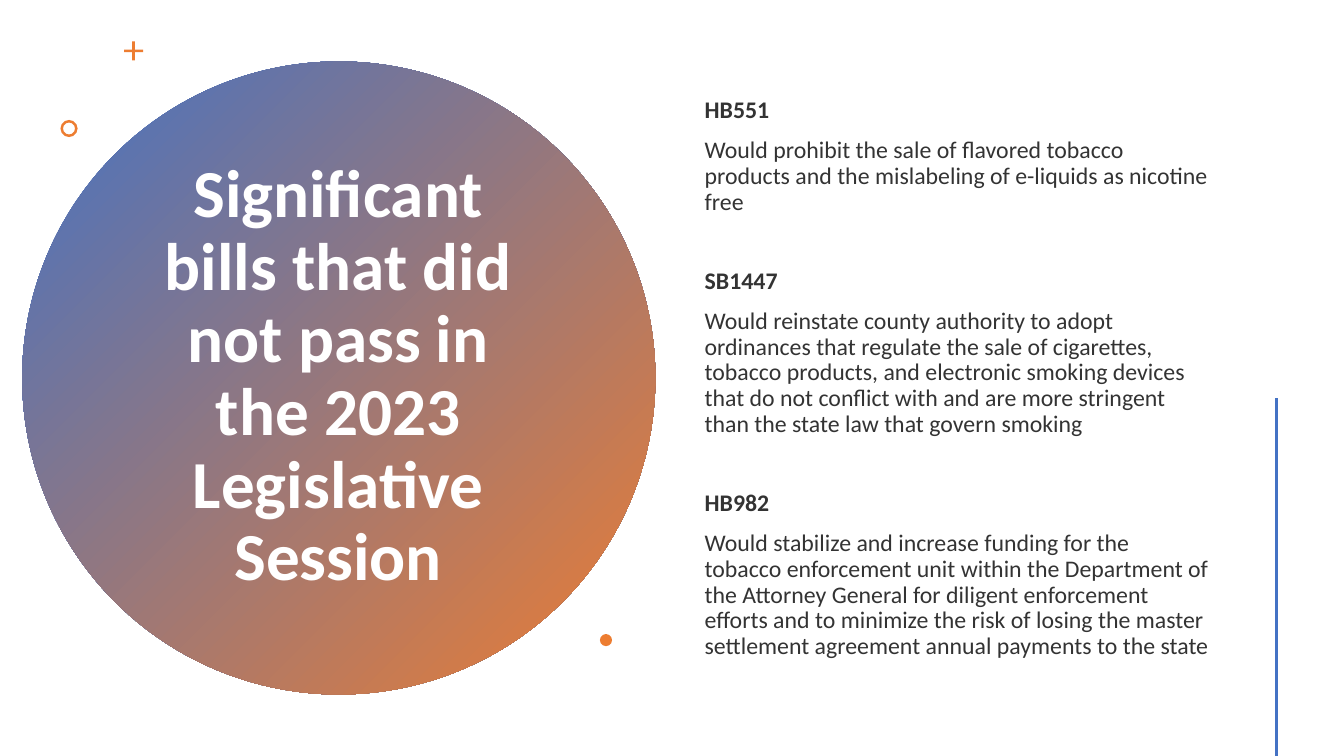
from lxml import etree
from pptx import Presentation
from pptx.dml.color import RGBColor
from pptx.enum.shapes import MSO_CONNECTOR, MSO_SHAPE
from pptx.enum.text import MSO_ANCHOR, MSO_AUTO_SIZE, PP_ALIGN
from pptx.oxml.ns import qn
from pptx.util import Inches, Pt

OVAL, DONUT, CROSS = MSO_SHAPE.OVAL, MSO_SHAPE.DONUT, MSO_SHAPE.CROSS
STRAIGHT = MSO_CONNECTOR.STRAIGHT
MIDDLE = MSO_ANCHOR.MIDDLE
CENTER, LEFT = PP_ALIGN.CENTER, PP_ALIGN.LEFT
FIXED_SIZE = MSO_AUTO_SIZE.NONE

SLIDE_WIDTH, SLIDE_HEIGHT = 13.33, 7.5
TITLE_ONLY_LAYOUT = 5
FONT = "Calibri"
BLUE, ORANGE, WHITE, DARK = "4472C4", "ED7D31", "FFFFFF", "333333"
LINE_SPACING = 0.9
TEXT_GAP, BILL_GAP = 10, 38.5

TITLE = "Significant bills that did not pass in the 2023 Legislative Session"
BILLS = [
    ("HB551", "Would prohibit the sale of flavored tobacco products and the "
     "mislabeling of e-liquids as nicotine free"),
    ("SB1447", "Would reinstate county authority to adopt ordinances that "
     "regulate the sale of cigarettes, tobacco products, and electronic "
     "smoking devices that do not conflict with and are more stringent than "
     "the state law that govern smoking"),
    ("HB982", "Would stabilize and increase funding for the tobacco "
     "enforcement unit within the Department of the Attorney General for "
     "diligent enforcement efforts and to minimize the risk of losing the "
     "master settlement agreement annual payments to the state"),
]
# Shape, left, top, size, adjustment
ACCENTS = [
    (CROSS, 1.23, 0.41, 0.19, 0.43),
    (DONUT, 0.6, 1.19, 0.17, 0.15),
    (OVAL, 5.95, 6.29, 0.12, None),
]


def color(hex_value):
    return RGBColor.from_string(hex_value)


def box(left, top, width, height):
    return [Inches(value) for value in (left, top, width, height)]


def add_plain_shape(slide, kind, left, top, size):
    """Add a square-framed shape without outline or shadow."""
    shape = slide.shapes.add_shape(kind, *box(left, top, size, size))
    shape.shadow.inherit = False
    shape.line.fill.background()
    return shape


def add_gradient_circle(slide):
    circle = add_plain_shape(slide, OVAL, 0.22, 0.61, 6.28)
    circle.fill.gradient()
    circle.fill.gradient_angle = 315
    for stop, hex_value in zip(circle.fill.gradient_stops, (BLUE, ORANGE)):
        stop.color.rgb = color(hex_value)
    return circle


def add_accent(slide, kind, left, top, size, adjustment):
    accent = add_plain_shape(slide, kind, left, top, size)
    accent.fill.solid()
    accent.fill.fore_color.rgb = color(ORANGE)
    if adjustment is not None:
        accent.adjustments[0] = adjustment


def prepare_frame(shape):
    frame = shape.text_frame
    frame.word_wrap = True
    frame.auto_size = FIXED_SIZE
    frame.vertical_anchor = MIDDLE
    return frame


def write_paragraph(paragraph, text, size, hex_value, bold, align, gap=0):
    paragraph.text = text
    paragraph.alignment = align
    paragraph.line_spacing = LINE_SPACING
    paragraph.space_before = Pt(gap)
    font = paragraph.runs[0].font
    font.name, font.size, font.bold = FONT, Pt(size), bold
    font.color.rgb = color(hex_value)


def place_title(slide):
    title = slide.shapes.title
    title.left, title.top, title.width, title.height = box(1.36, 1.41, 3.99, 4.67)
    frame = prepare_frame(title)
    write_paragraph(frame.paragraphs[0], TITLE, 48, WHITE, True, CENTER)
    return title


def add_bills(slide):
    frame = prepare_frame(slide.shapes.add_textbox(*box(6.89, 0.57, 5.22, 6.38)))
    for index, (number, summary) in enumerate(BILLS):
        heading = frame.add_paragraph() if index else frame.paragraphs[0]
        gap = BILL_GAP if index else TEXT_GAP
        write_paragraph(heading, number, 17, DARK, True, LEFT, gap)
        write_paragraph(frame.add_paragraph(), summary, 17, DARK, False, LEFT, TEXT_GAP)


def add_side_line(slide):
    left = Inches(SLIDE_WIDTH * 0.95)
    line = slide.shapes.add_connector(
        STRAIGHT, left, Inches(3.95), left, Inches(SLIDE_HEIGHT))
    line.line.color.rgb = color(BLUE)
    line.line.width = Pt(2)
    etree.SubElement(line.element.spPr, qn("a:effectLst"))


def main():
    presentation = Presentation()
    presentation.slide_width = Inches(SLIDE_WIDTH)
    presentation.slide_height = Inches(SLIDE_HEIGHT)
    layout = presentation.slide_layouts[TITLE_ONLY_LAYOUT]
    slide = presentation.slides.add_slide(layout)

    title = place_title(slide)
    circle = add_gradient_circle(slide)
    title.element.addprevious(circle.element)
    for accent in ACCENTS:
        add_accent(slide, *accent)
    add_bills(slide)
    add_side_line(slide)
    presentation.save("out.pptx")


if __name__ == "__main__":
    main()
